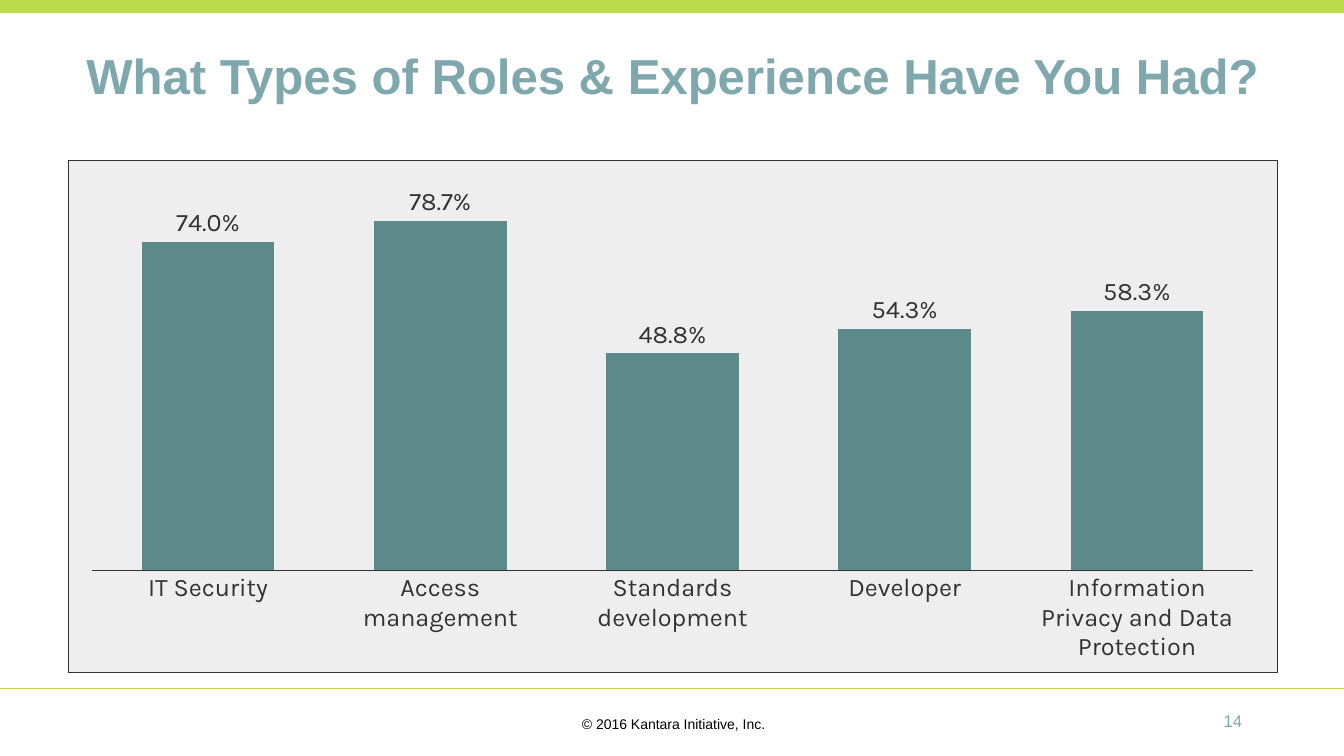
from lxml import etree
from pptx import Presentation
from pptx.chart.data import CategoryChartData
from pptx.dml.color import RGBColor
from pptx.enum.chart import XL_CHART_TYPE as ChartType
from pptx.enum.chart import XL_LABEL_POSITION as LabelPosition
from pptx.enum.chart import XL_TICK_MARK as TickMark
from pptx.enum.shapes import MSO_CONNECTOR as Connector
from pptx.enum.shapes import MSO_SHAPE as Shape
from pptx.enum.text import MSO_ANCHOR as Anchor
from pptx.enum.text import MSO_AUTO_SIZE as AutoSize
from pptx.enum.text import PP_ALIGN as Align
from pptx.oxml import parse_xml
from pptx.oxml.ns import nsdecls, qn
from pptx.util import Inches, Pt

LIME = RGBColor(0xBA, 0xD9, 0x4B)
MIST = RGBColor(0x7E, 0xA8, 0xAD)
TEAL = RGBColor(0x5C, 0x8A, 0x8A)
INK = RGBColor(0x33, 0x33, 0x33)
PANEL = RGBColor(0xEE, 0xEE, 0xEE)
BLACK = RGBColor(0, 0, 0)

ROLES = {
    "IT Security": 0.74,
    "Access management": 0.787,
    "Standards development": 0.488,
    "Developer": 0.543,
    "Information Privacy and Data Protection": 0.583,
}


def area_style(line):
    return parse_xml(
        f'<c:spPr {nsdecls("c", "a")}><a:solidFill><a:srgbClr val="{PANEL}"/>'
        f"</a:solidFill>{line}</c:spPr>"
    )


class SlideBuilder:
    text_font = "Arial"
    chart_font = "Karla"

    def __init__(self, page):
        self.page = page

    def style(self, font, name, size, color, bold=False):
        font.name, font.size, font.bold = name, Pt(size), bold
        font.color.rgb = color

    def fill_text(self, box, text, size, color, align, bold=False):
        frame = box.text_frame
        frame.text = text
        frame.word_wrap = True
        frame.auto_size = AutoSize.NONE
        frame.vertical_anchor = Anchor.MIDDLE
        para = frame.paragraphs[0]
        para.alignment = align
        self.style(para.runs[0].font, self.text_font, size, color, bold)

    def title(self, text, left, top, width, height):
        box = self.page.shapes.title
        box.left, box.top = Inches(left), Inches(top)
        box.width, box.height = Inches(width), Inches(height)
        self.fill_text(box, text, 35.1, MIST, Align.CENTER, bold=True)

    def text(self, text, left, top, width, height, size, color, align):
        box = self.page.shapes.add_textbox(
            Inches(left), Inches(top), Inches(width), Inches(height))
        self.fill_text(box, text, size, color, align)

    def band(self, left, top, width, height):
        band = self.page.shapes.add_shape(
            Shape.RECTANGLE, Inches(left), Inches(top), Inches(width), Inches(height))
        band.shadow.inherit = False
        band.fill.solid()
        band.fill.fore_color.rgb = LIME
        band.line.fill.background()

    def rule(self, top, width):
        rule = self.page.shapes.add_connector(
            Connector.STRAIGHT, 0, Inches(top), Inches(width), Inches(top))
        rule.line.color.rgb = LIME
        rule.line.width = Pt(0.5)
        etree.SubElement(rule._element.spPr, qn("a:effectLst"))

    def column_chart(self, values, left, top, width, height):
        data = CategoryChartData(number_format="0.0%")
        data.categories = list(values)
        data.add_series("Series 1", list(values.values()))
        chart = self.page.shapes.add_chart(
            ChartType.COLUMN_CLUSTERED, Inches(left), Inches(top),
            Inches(width), Inches(height), data).chart
        chart.has_title = chart.has_legend = False
        self.style(chart.font, self.chart_font, 18, INK)

        # Axes
        roles = chart.category_axis
        roles.major_tick_mark = roles.minor_tick_mark = TickMark.NONE
        roles.format.line.color.rgb = INK
        roles.format.line.width = Pt(0.25)
        self.style(roles.tick_labels.font, self.chart_font, 18, INK)
        shares = chart.value_axis
        shares.visible = shares.has_major_gridlines = False
        shares.minimum_scale, shares.maximum_scale = 0, 0.9

        # Columns and their labels
        plot = chart.plots[0]
        plot.gap_width = 75
        plot.vary_by_categories = False
        columns = plot.series[0].format
        columns.fill.solid()
        columns.fill.fore_color.rgb = TEAL
        plot.has_data_labels = True
        labels = plot.data_labels
        labels.show_value = True
        labels.number_format, labels.number_format_is_linked = "0.0%", False
        labels.position = LabelPosition.OUTSIDE_END
        self.style(labels.font, self.chart_font, 18, INK)
        self.chart_areas(chart, x=0.02, y=0.02, w=0.96, h=0.78)

    def chart_areas(self, chart, **inner):
        root = chart._chartSpace
        border = (f'<a:ln w="{Pt(0.25)}"><a:solidFill><a:srgbClr val="{INK}"/>'
                  "</a:solidFill></a:ln>")
        root.find(qn("c:chart")).addnext(area_style(border))
        plot_area = root.find(".//" + qn("c:plotArea"))
        plot_area.append(area_style("<a:ln><a:noFill/></a:ln>"))
        for layout in plot_area.findall(qn("c:layout")):
            plot_area.remove(layout)
        sizes = "".join(f'<c:{key} val="{value}"/>' for key, value in inner.items())
        plot_area.insert(0, parse_xml(
            f'<c:layout {nsdecls("c")}><c:manualLayout><c:layoutTarget val="inner"/>'
            f'<c:xMode val="edge"/><c:yMode val="edge"/>{sizes}'
            "</c:manualLayout></c:layout>"))


def main():
    deck = Presentation()
    deck.slide_width, deck.slide_height = Inches(13.33), Inches(7.5)
    builder = SlideBuilder(deck.slides.add_slide(deck.slide_layouts[5]))

    # Frame of the page
    builder.band(0, 0, 13.33, 0.13)
    builder.rule(6.83, 13.33)
    builder.text("© 2016 Kantara Initiative, Inc.", 5.58, 7.05, 2.2, 0.27,
                 10, BLACK, Align.CENTER)

    # Title and chart
    builder.title("What Types of Roles & Experience Have You Had?", 0.67, 0.17, 12, 1.15)
    builder.column_chart(ROLES, 0.67, 1.59, 12, 5.08)

    # Page number
    builder.text("14", 9.42, 6.95, 3, 0.4, 12, MIST, Align.RIGHT)
    deck.save("out.pptx")


if __name__ == "__main__":
    main()
